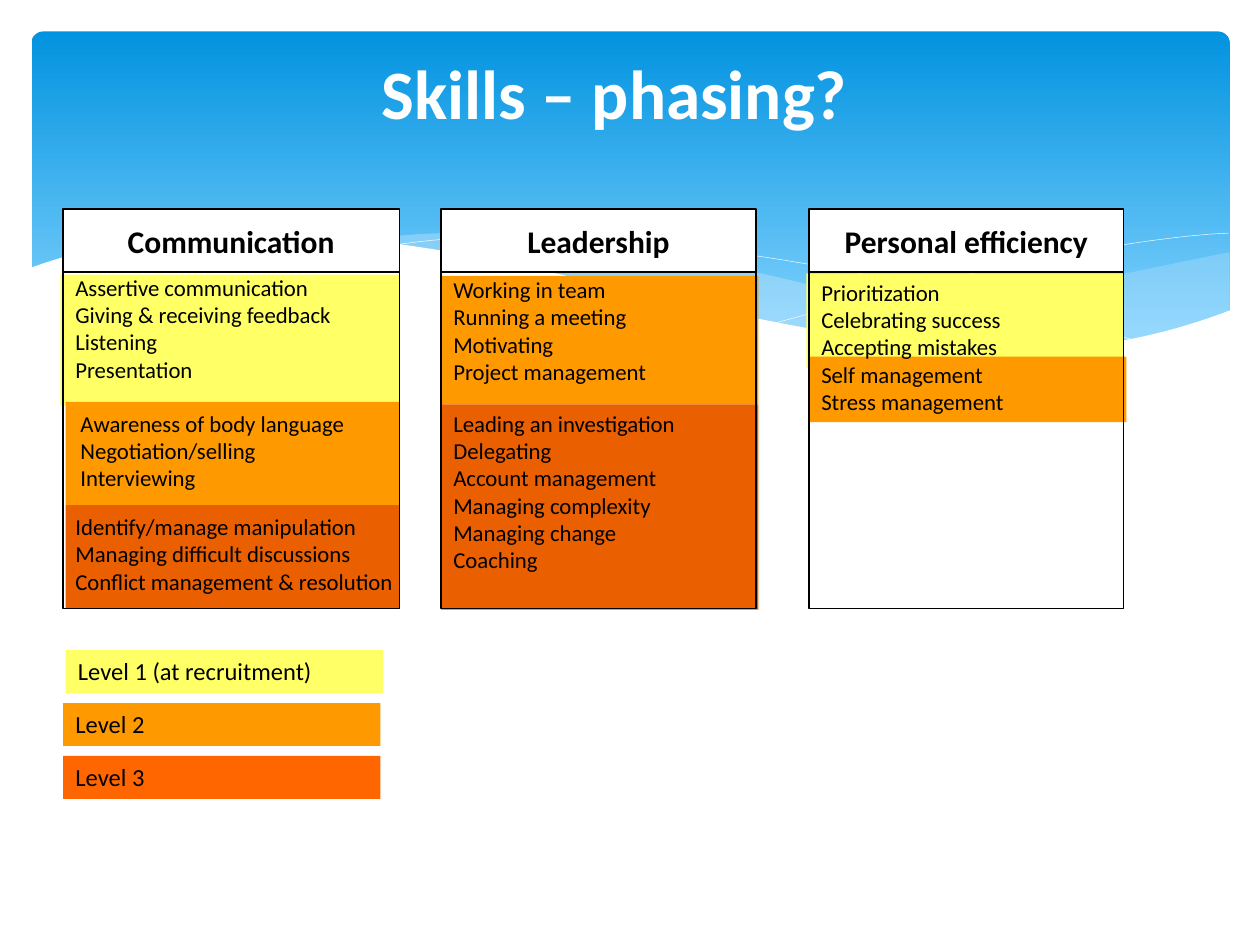
from dataclasses import dataclass
from math import cos, pi

from lxml.etree import SubElement
from pptx import Presentation
from pptx.dml.color import RGBColor
from pptx.enum.shapes import MSO_SHAPE
from pptx.enum.text import MSO_ANCHOR, PP_ALIGN
from pptx.oxml.ns import qn
from pptx.util import Inches, Pt


@dataclass(frozen=True)
class Theme:
    font: str = "Calibri"
    black: str = "000000"
    white: str = "FFFFFF"
    sky_top: str = "0293E0"
    sky_bottom: str = "83D3FE"
    wave: str = "C6E7FC"
    level1: str = "FFFF66"
    level2: str = "FF9900"
    level3: str = "EA5F00"
    level3_key: str = "FF6600"
    title: float = 39.6
    header: float = 18
    key: float = 14
    body: float = 13
    outline: float = 0.75
    hairline: float = 0.25


@dataclass(frozen=True)
class Band:
    left: float
    top: float
    width: float
    height: float
    color: str


@dataclass(frozen=True)
class Skills:
    left: float
    top: float
    names: tuple
    width: float = 2.5


@dataclass(frozen=True)
class Column:
    name: str
    left: float
    width: float
    bands: tuple
    skills: tuple


T = Theme()
HEADER_TOP, HEADER_HEIGHT, BODY_HEIGHT = 1.66, 0.5, 2.67
LINE_HEIGHT, TEXT_PADDING = 0.22, 0.1
KEY_TOP, KEY_STEP, KEY_WIDTH, KEY_HEIGHT = 5.16, 0.42, 2.52, 0.34
CURVE_STEPS = 24

COLUMNS = (
    Column("Communication", 0.5, 2.67, (
        Band(0.48, 2.18, 2.69, 1.04, T.level1),
        Band(0.52, 3.19, 2.65, 0.82, T.level2),
        Band(0.52, 4.01, 2.65, 0.82, T.level3),
    ), (
        Skills(0.5, 2.12, ("Assertive communication", "Giving & receiving feedback",
                           "Listening", "Presentation")),
        Skills(0.54, 3.2, ("Awareness of body language", "Negotiation/selling",
                           "Interviewing")),
        Skills(0.5, 4.02, ("Identify/manage manipulation", "Managing difficult discussions",
                           "Conflict management & resolution"), 2.75),
    )),
    Column("Leadership", 3.5, 2.5, (
        Band(3.5, 2.19, 2.52, 1.02, T.level2),
        Band(3.5, 3.21, 2.52, 1.63, T.level3),
    ), (
        Skills(3.5, 2.14, ("Working in team", "Running a meeting", "Motivating",
                           "Project management")),
        Skills(3.5, 3.2, ("Leading an investigation", "Delegating", "Account management",
                          "Managing complexity", "Managing change", "Coaching")),
    )),
    Column("Personal efficiency", 6.42, 2.5, (
        Band(6.4, 2.17, 2.52, 0.75, T.level1),
        Band(6.42, 2.83, 2.52, 0.52, T.level2),
    ), (
        Skills(6.42, 2.16, ("Prioritization", "Celebrating success", "Accepting mistakes",
                            "Self management", "Stress management")),
    )),
)
KEY = (
    (0.52, T.level1, "Level 1 (at recruitment)"),
    (0.5, T.level2, "Level 2"),
    (0.5, T.level3_key, "Level 3"),
)


def eased(start, end, ease):
    (x0, y0), (x1, y1) = start, end
    steps = [i / CURVE_STEPS for i in range(CURVE_STEPS + 1)]
    return [(x0 + (x1 - x0) * t, y0 + (y1 - y0) * ease(t)) for t in steps]


def swell(crest, trough):
    return eased(crest, trough, lambda t: (1 - cos(pi * t)) / 2)


def arc(flat, end, power=2):
    return eased(flat, end, lambda t: t ** power)


def paint(sp, fill=None, line=None, width=T.outline, alpha=None):
    sp.shadow.inherit = False
    if fill:
        sp.fill.solid()
        sp.fill.fore_color.rgb = RGBColor.from_string(fill)
        if alpha:
            clr = sp.fill._xPr.find(qn("a:solidFill"))[0]
            SubElement(clr, qn("a:alpha")).set("val", str(alpha * 1000))
    else:
        sp.fill.background()
    if line:
        sp.line.color.rgb = RGBColor.from_string(line)
        sp.line.width = Pt(width)
    else:
        sp.line.fill.background()


def write(sp, text, size, color=T.black, bold=False, align=PP_ALIGN.LEFT,
          anchor=MSO_ANCHOR.TOP):
    tf = sp.text_frame
    tf.word_wrap = True
    tf.vertical_anchor = anchor
    tf.text = text
    for p in tf.paragraphs:
        p.alignment = align
        for r in p.runs:
            r.font.name = T.font
            r.font.size = Pt(size)
            r.font.bold = bold
            r.font.color.rgb = RGBColor.from_string(color)


def add_box(s, x, y, w, h, fill=None, line=None, kind=MSO_SHAPE.RECTANGLE):
    sp = s.shapes.add_shape(kind, Inches(x), Inches(y), Inches(w), Inches(h))
    paint(sp, fill, line)
    return sp


def add_text(s, x, y, w, h, text, size, **style):
    sp = s.shapes.add_textbox(Inches(x), Inches(y), Inches(w), Inches(h))
    write(sp, text, size, **style)
    return sp


def add_curve(s, points, close=True, **look):
    start, *rest = [(Inches(x), Inches(y)) for x, y in points]
    fb = s.shapes.build_freeform(*start)
    fb.add_line_segments(rest, close=close)
    paint(fb.convert_to_shape(), **look)


def add_sky(s):
    sky = add_box(s, 0.25, 0.25, 9.51, 2.7, kind=MSO_SHAPE.ROUNDED_RECTANGLE)
    sky.adjustments[0] = 0.034
    sky.fill.gradient()
    sky.fill.gradient_angle = 270
    stops = ((0, T.sky_top), (0.9, T.sky_bottom))
    for stop, (position, color) in zip(sky.fill.gradient_stops, stops):
        stop.position = position
        stop.color.rgb = RGBColor.from_string(color)


def add_waves(s):
    left, right, base, bottom = 0.23, 9.77, 2.78, 3.29

    right_wave = [(6.61, 2.65), (9.76, 2), (9.76, base), (6.61, base)]
    add_curve(s, right_wave, fill=T.wave, alpha=29)

    crest = (3.61, 1.85)
    rise = arc(crest, (2.86, 1.91))[::-1]
    middle_wave = rise + swell(crest, (9.7, base)) + [(2.86, base)]
    add_curve(s, middle_wave, fill=T.wave, alpha=40)

    crest = (4.16, 1.87)
    long_line = arc(crest, (3.09, 1.95))[::-1] + arc(crest, (9.07, 2.72), 1.7)
    right_line = arc((9.75, 1.85), (6.13, 2.57), 1.4)
    for line in (long_line, right_line):
        add_curve(s, line, close=False, line=T.white, width=T.hairline)

    crest, trough = (1.85, 1.84), (8.16, 2.77)
    front_wave = (arc(crest, (left, 2.13))[::-1] + swell(crest, trough)
                  + arc(trough, (right, 2.46)) + [(right, bottom), (left, bottom)])
    add_curve(s, front_wave, fill=T.white)


def add_title(s, text):
    title = add_text(s, 0.5, 0.37, 9, 1.37, text, T.title,
                     color=T.white, bold=True, align=PP_ALIGN.CENTER)
    title.text_frame.margin_top = Inches(0.03)
    title.text_frame.margin_right = Inches(0.34)


def add_column(s, column):
    for band in column.bands:
        add_box(s, band.left, band.top, band.width, band.height, band.color)
    for skills in column.skills:
        height = TEXT_PADDING + LINE_HEIGHT * len(skills.names)
        add_text(s, skills.left, skills.top, skills.width, height,
                 "\n".join(skills.names), T.body)
    header = add_box(s, column.left, HEADER_TOP, column.width, HEADER_HEIGHT,
                     T.white, T.black)
    write(header, column.name, T.header, bold=True, align=PP_ALIGN.CENTER,
          anchor=MSO_ANCHOR.MIDDLE)
    add_box(s, column.left, HEADER_TOP + HEADER_HEIGHT, column.width, BODY_HEIGHT,
            line=T.black)


def add_key(s):
    for i, (x, color, label) in enumerate(KEY):
        sp = add_box(s, x, KEY_TOP + KEY_STEP * i, KEY_WIDTH, KEY_HEIGHT, color)
        write(sp, label, T.key)


def main():
    prs = Presentation()
    prs.slide_width, prs.slide_height = Inches(10), Inches(7.5)
    s = prs.slides.add_slide(prs.slide_layouts[6])
    add_sky(s)
    add_waves(s)
    add_title(s, "Skills – phasing?")
    for column in COLUMNS:
        add_column(s, column)
    add_key(s)
    prs.save("out.pptx")


if __name__ == "__main__":
    main()
